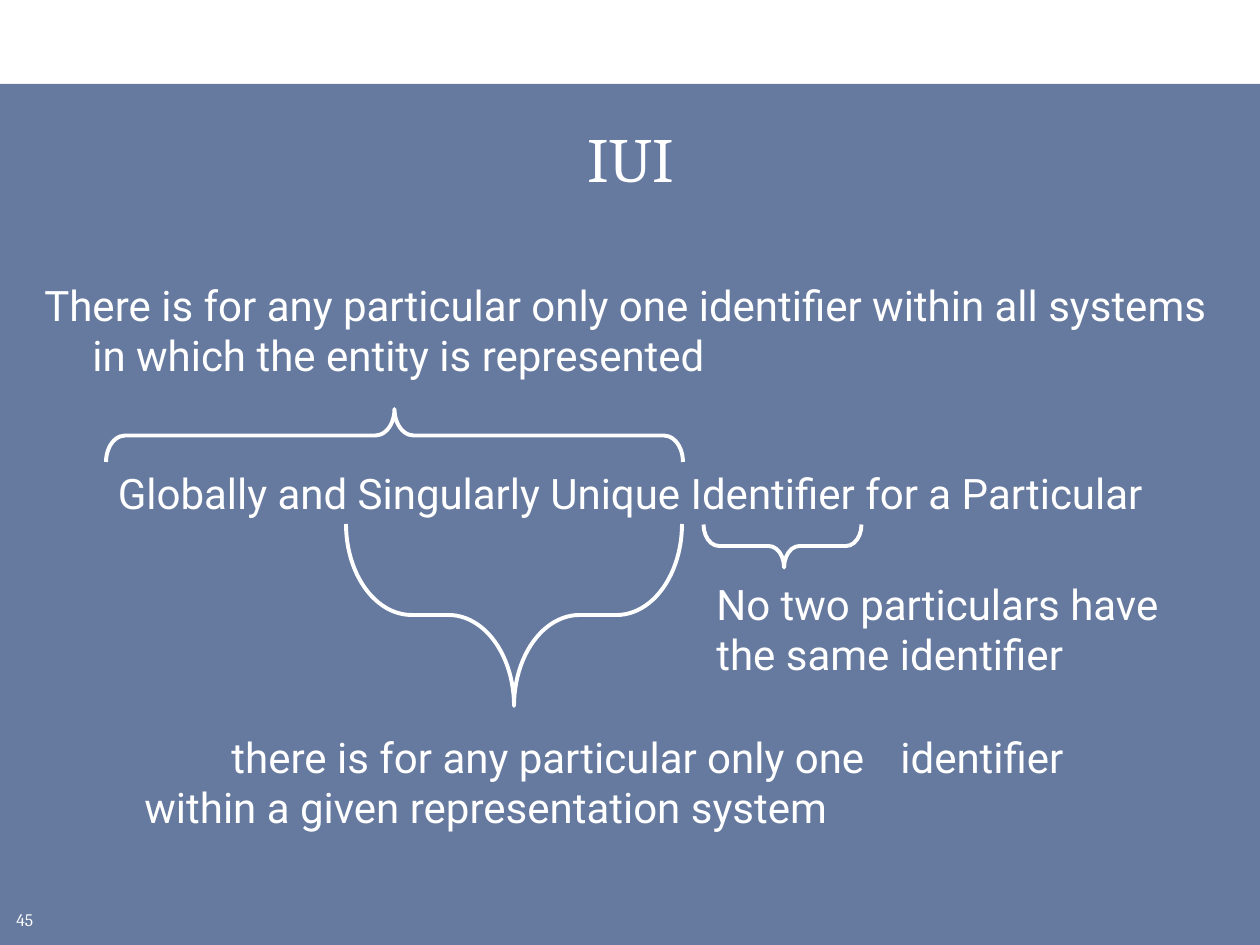
"""Build the slide that explains the parts of an IUI with braces."""
from lxml import etree
from pptx import Presentation
from pptx.dml.color import RGBColor
from pptx.enum.shapes import MSO_SHAPE
from pptx.enum.text import MSO_ANCHOR, PP_ALIGN
from pptx.oxml.ns import qn
from pptx.util import Pt

PX = 914400 // 126
RECTANGLE, BRACE = MSO_SHAPE.RECTANGLE, MSO_SHAPE.RIGHT_BRACE
LEFT, CENTER = PP_ALIGN.LEFT, PP_ALIGN.CENTER
TOP, MIDDLE = MSO_ANCHOR.TOP, MSO_ANCHOR.MIDDLE
COLORS = {"panel": "002060", "white": "FFFFFF"}
HANGING = (48, -48)

deck = Presentation()
deck.slide_width, deck.slide_height = 1260 * PX, 945 * PX
page = deck.slides.add_slide(deck.slide_layouts[6])


def add_shape(kind, place):
    shape = page.shapes.add_shape(kind, *[length * PX for length in place])
    shape.shadow.inherit = False
    return shape


def add_text(place, text, size=24, font="Roboto", align=LEFT, anchor=TOP, indents=(0, 0), tab=None):
    box = page.shapes.add_textbox(*[length * PX for length in place])
    frame = box.text_frame
    frame.word_wrap = True
    frame.vertical_anchor = anchor
    para = frame.paragraphs[0]
    para.alignment = align
    properties = para._p.get_or_add_pPr()
    margin, first = indents
    properties.set("marL", str(margin * PX))
    properties.set("indent", str(first * PX))
    if tab:
        stops = etree.SubElement(properties, qn("a:tabLst"))
        etree.SubElement(stops, qn("a:tab"), pos=str(tab * PX), algn="l")
    span = para.add_run()
    span.text = text
    span.font.size = Pt(size)
    span.font.name = font
    span.font.color.rgb = RGBColor.from_string(COLORS["white"])


panel = add_shape(RECTANGLE, (0, 84, 1260, 861))
panel.fill.solid()
panel.fill.fore_color.rgb = RGBColor.from_string(COLORS["panel"])
panel.line.fill.background()
panel_color = panel.fill._xPr.find(qn("a:solidFill"))[0]
etree.SubElement(panel_color, qn("a:alpha"), val="60000")

add_text((4, 903, 49, 32), "45", size=10, font="Cambria", indents=HANGING)
add_text((32, 105, 1197, 105), "IUI", size=36, font="Cambria", align=CENTER, anchor=MIDDLE)
add_text((32, 273, 1197, 158),
         "There is for any particular only one identifier within all systems "
         "in which the entity is represented", indents=HANGING)
add_text((32, 461, 1197, 63),
         "Globally and Singularly Unique Identifier for a Particular",
         align=CENTER, indents=HANGING)
add_text((704, 572, 525, 137), "No two particulars have the same identifier")
add_text((84, 725, 1103, 137),
         "there is for any particular only one\tidentifier within a given representation system",
         indents=(48, 87), tab=787)

BRACES = [
    ((423, 447, 182, 336), 90, 0.5),
    ((368, 147, 53, 577), 270, 0.5),
    ((761, 467, 43, 158), 90, 0.49),
]
for place, rotation, tip in BRACES:
    brace = add_shape(BRACE, place)
    brace.rotation = rotation
    brace.adjustments[0] = 0.36
    brace.adjustments[1] = tip
    brace.fill.background()
    brace.line.color.rgb = RGBColor.from_string(COLORS["white"])
    brace.line.width = Pt(2.25)

deck.save("out.pptx")
